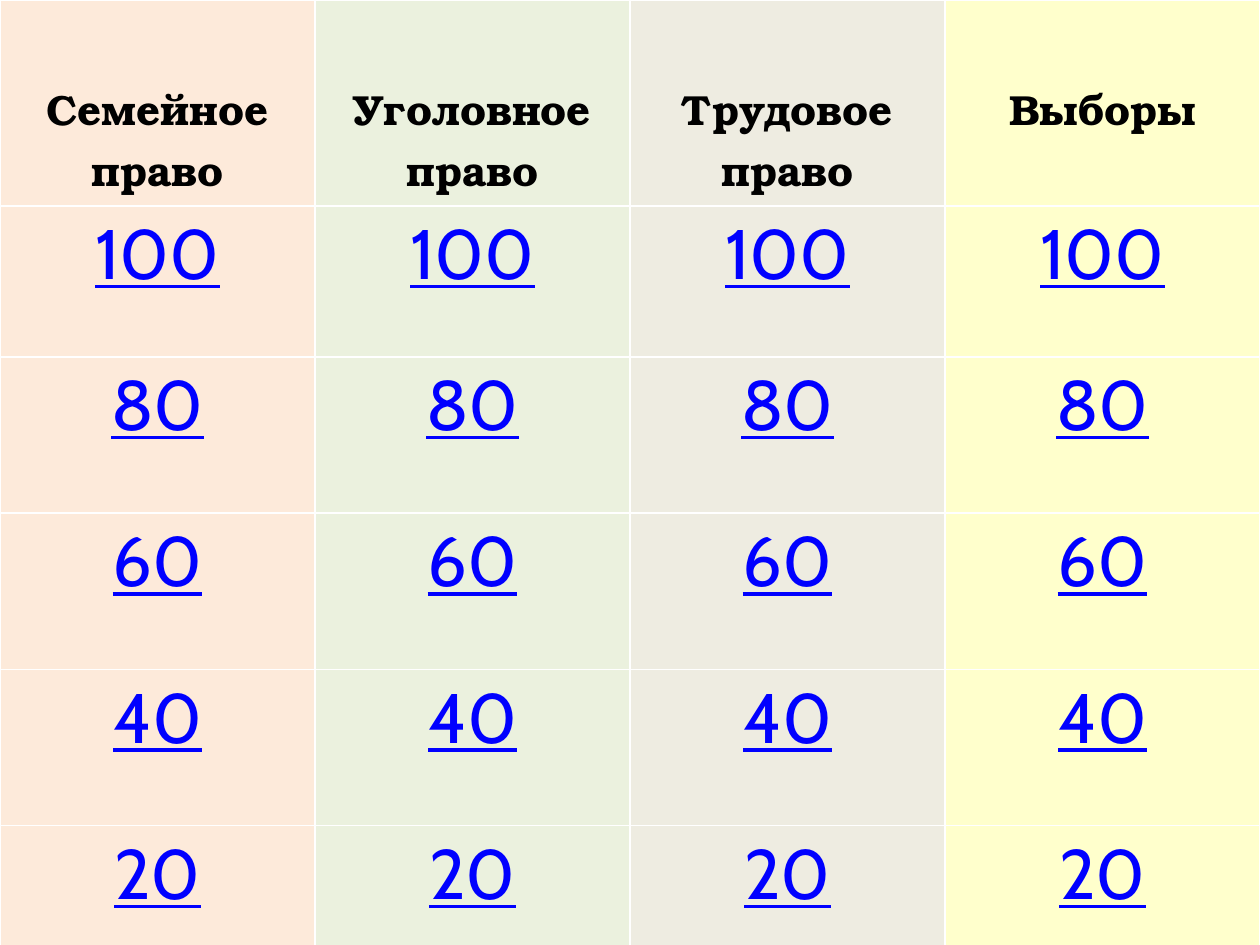
from dataclasses import dataclass

from lxml import etree
from pptx import Presentation
from pptx.dml.color import RGBColor
from pptx.enum.text import PP_ALIGN
from pptx.oxml.ns import qn
from pptx.util import Inches, Pt

CENTER = PP_ALIGN.CENTER
BLANK_LAYOUT = 6

TOPICS = ["Семейное право", "Уголовное право", "Трудовое право", "Выборы"]
POINTS = [100, 80, 60, 40, 20]
COLUMN_WIDTH = 2.5
ROW_HEIGHTS = [1.36, 1.2, 1.24, 1.24, 1.24, 1.24]


@dataclass(frozen=True)
class Theme:
    column_fills: tuple = ("FDEADA", "EBF1DE", "EEECE1", "FFFFCC")
    border: str = "FFFFFF"
    border_width: float = 1
    heading_color: str = "000000"
    heading_font: str = "TeX Gyre Bonum"
    heading_size: float = 24
    points_color: str = "0000FF"
    points_font: str = "Cabin"
    points_size: float = 40


class QuizSlide:
    def __init__(self, slide, theme):
        self.slide = slide
        self.theme = theme

    def add_board(self, topics, points):
        frame = self.slide.shapes.add_table(
            len(points) + 1, len(topics), 0, 0,
            Inches(COLUMN_WIDTH * len(topics)), Inches(sum(ROW_HEIGHTS)))
        table = frame.table
        table.first_row = False
        table.horz_banding = False
        for column in table.columns:
            column.width = Inches(COLUMN_WIDTH)
        for row, height in zip(table.rows, ROW_HEIGHTS):
            row.height = Inches(height)
        for column_index, topic in enumerate(topics):
            self.fill_heading(table.cell(0, column_index), topic, column_index)
            for row_index, value in enumerate(points, start=1):
                self.fill_points(table.cell(row_index, column_index), value, column_index)

    def fill_heading(self, cell, topic, column_index):
        theme = self.theme
        cell.margin_top = Inches(0.61)
        font = self.fill_cell(cell, topic, column_index, theme.heading_font,
                              theme.heading_size, theme.heading_color)
        font.bold = True

    def fill_points(self, cell, value, column_index):
        theme = self.theme
        font = self.fill_cell(cell, str(value), column_index, theme.points_font,
                              theme.points_size, theme.points_color)
        font.bold = False
        font.underline = True

    def fill_cell(self, cell, text, column_index, font_name, size, color):
        self.add_borders(cell)
        cell.fill.solid()
        cell.fill.fore_color.rgb = RGBColor.from_string(self.theme.column_fills[column_index])
        cell.text = text
        paragraph = cell.text_frame.paragraphs[0]
        paragraph.alignment = CENTER
        font = paragraph.font
        font.name = font_name
        font.size = Pt(size)
        font.color.rgb = RGBColor.from_string(color)
        return font

    def add_borders(self, cell):
        properties = cell._tc.get_or_add_tcPr()
        for side in ("a:lnL", "a:lnR", "a:lnT", "a:lnB"):
            line = etree.SubElement(properties, qn(side), w=str(Pt(self.theme.border_width)))
            fill = etree.SubElement(line, qn("a:solidFill"))
            etree.SubElement(fill, qn("a:srgbClr"), val=self.theme.border)


def main():
    presentation = Presentation()
    presentation.slide_width = Inches(10)
    presentation.slide_height = Inches(7.5)
    slide = presentation.slides.add_slide(presentation.slide_layouts[BLANK_LAYOUT])
    QuizSlide(slide, Theme()).add_board(TOPICS, POINTS)
    presentation.save("out.pptx")


if __name__ == "__main__":
    main()
